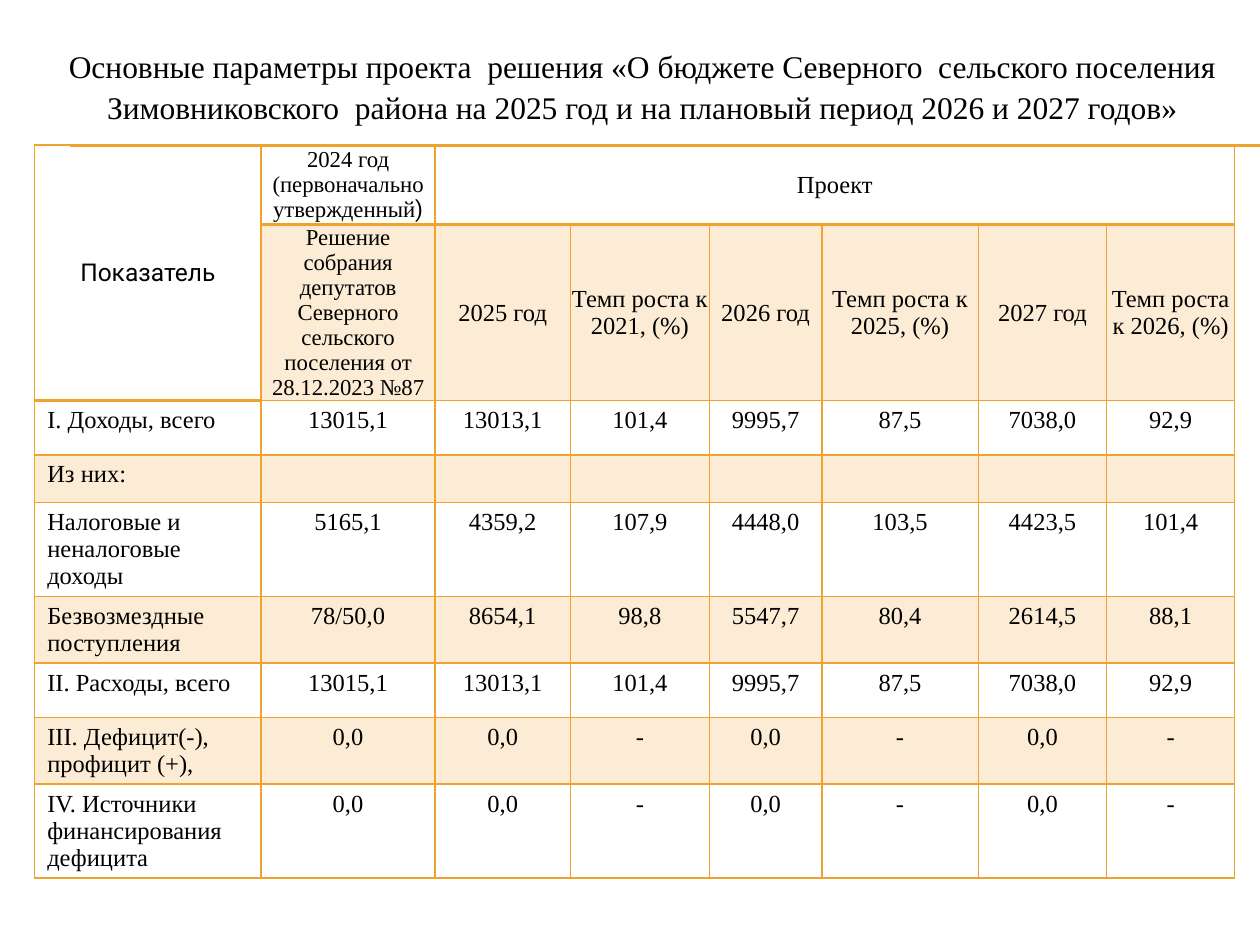
from dataclasses import dataclass

from lxml import etree
from pptx import Presentation
from pptx.dml.color import RGBColor
from pptx.enum import shapes, text
from pptx.oxml import ns
from pptx.util import Pt


@dataclass(frozen=True)
class Theme:
    accent: str = "F0A22E"
    ink: str = "000000"
    band_alpha: int = 20
    serif: str = "Times New Roman"
    sans: str = "Roboto"
    title_size: int = 18
    body_size: int = 14
    small_size: int = 13


THEME = Theme()

TITLE = ("Основные параметры проекта  решения «О бюджете Северного  сельского поселения "
         "Зимовниковского  района на 2025 год и на плановый период 2026 и 2027 годов»")
COLUMN_WIDTHS = [129.4, 99.4, 77.4, 79.4, 64.3, 89.4, 73.4, 73.1]
ROW_HEIGHTS = [45.4, 90.7, 31, 27.2, 31, 31, 31, 31, 51.8]

DECISION = "Решение собрания депутатов Северного сельского поселения от 28.12.2023 №87"
PERIODS = ["2025 год", "Темп роста к 2021, (%)", "2026 год", "Темп роста к 2025, (%)",
           "2027 год", "Темп роста к 2026, (%)"]
TOTALS = ["13015,1", "13013,1", "101,4", "9995,7", "87,5", "7038,0", "92,9"]
BALANCE = ["0,0", "0,0", "-", "0,0", "-", "0,0", "-"]
INDICATORS = [
    ["I. Доходы, всего", *TOTALS],
    ["Из них:", *[""] * 7],
    ["Налоговые и неналоговые доходы",
     "5165,1", "4359,2", "107,9", "4448,0", "103,5", "4423,5", "101,4"],
    ["Безвозмездные поступления",
     "78/50,0", "8654,1", "98,8", "5547,7", "80,4", "2614,5", "88,1"],
    ["II. Расходы, всего", *TOTALS],
    ["III. Дефицит(-), профицит (+),", *BALANCE],
    ["IV. Источники финансирования дефицита", *BALANCE],
]


def add_run(paragraph, wording, size, font=THEME.serif):
    run = paragraph.add_run()
    run.text = wording
    run.font.size = Pt(size)
    run.font.name = font
    run.font.color.rgb = RGBColor.from_string(THEME.ink)


def add_title(slide):
    title = slide.shapes.title
    title.left, title.top, title.width, title.height = Pt(25.2), Pt(15.1), Pt(684), Pt(66.2)
    title.text_frame.vertical_anchor = text.MSO_ANCHOR.MIDDLE
    paragraph = title.text_frame.paragraphs[0]
    paragraph.alignment = text.PP_ALIGN.CENTER
    paragraph.line_spacing = 1.1
    add_run(paragraph, TITLE, THEME.title_size)


def add_rule(slide, y):
    rule = slide.shapes.add_connector(
        shapes.MSO_CONNECTOR.STRAIGHT, Pt(40.3), Pt(y), Pt(720), Pt(y))
    rule.line.color.rgb = RGBColor.from_string(THEME.accent)
    rule.line.width = Pt(0.75)
    etree.SubElement(rule._element.spPr, ns.qn("a:effectLst"))


def set_borders(cell, bottom_width):
    properties = cell._tc.get_or_add_tcPr()
    for side, width in (("L", 1), ("R", 1), ("T", 1), ("B", bottom_width)):
        border = etree.SubElement(properties, ns.qn(f"a:ln{side}"), w=str(Pt(width)))
        fill = etree.SubElement(border, ns.qn("a:solidFill"))
        etree.SubElement(fill, ns.qn("a:srgbClr"), val=THEME.accent)


def set_fill(cell, banded):
    if not banded:
        cell.fill.background()
        return
    cell.fill.solid()
    cell.fill.fore_color.rgb = RGBColor.from_string(THEME.accent)
    color = cell._tc.tcPr.find(f".//{ns.qn('a:solidFill')}[last()]/{ns.qn('a:srgbClr')}")
    color = cell._tc.tcPr.find(ns.qn("a:solidFill")).find(ns.qn("a:srgbClr"))
    etree.SubElement(color, ns.qn("a:alpha"), val=str(THEME.band_alpha * 1000))


def write_header(cell, *lines, size=THEME.body_size):
    """Each line is a list of (wording, font) runs."""
    cell.vertical_anchor = text.MSO_ANCHOR.MIDDLE
    cell.margin_left = cell.margin_right = cell.margin_top = Pt(0.7)
    cell.margin_bottom = 0
    frame = cell.text_frame
    for number, runs in enumerate(lines):
        paragraph = frame.add_paragraph() if number else frame.paragraphs[0]
        paragraph.alignment = text.PP_ALIGN.CENTER
        for wording, font in runs:
            add_run(paragraph, wording, size, font)


def write_value(cell, wording, alignment):
    paragraph = cell.text_frame.paragraphs[0]
    paragraph.alignment = alignment
    if wording:
        add_run(paragraph, wording, THEME.body_size)
    else:
        # Keeps the row of an empty cell at the body text height
        etree.SubElement(paragraph._p, ns.qn("a:endParaRPr"), sz=str(THEME.body_size * 100))


def add_budget_table(slide):
    budget = slide.shapes.add_table(
        len(ROW_HEIGHTS), len(COLUMN_WIDTHS), Pt(19.8), Pt(82.8),
        Pt(sum(COLUMN_WIDTHS)), Pt(sum(ROW_HEIGHTS))).table
    budget.first_row = budget.horz_banding = False
    for column, width in zip(budget.columns, COLUMN_WIDTHS):
        column.width = Pt(width)
    for row, height in zip(budget.rows, ROW_HEIGHTS):
        row.height = Pt(height)

    # Borders and banding
    for r in range(len(ROW_HEIGHTS)):
        for c in range(len(COLUMN_WIDTHS)):
            cell = budget.cell(r, c)
            set_borders(cell, 2 if r == 0 or (r, c) == (1, 0) else 1)
            set_fill(cell, r % 2 == 1 and (r, c) != (1, 0))

    # Two-level header
    budget.cell(0, 0).merge(budget.cell(1, 0))
    budget.cell(0, 2).merge(budget.cell(0, 7))
    write_header(budget.cell(0, 0), [("Показатель", THEME.sans)])
    write_header(budget.cell(0, 1), [("2024 год", THEME.serif)],
                 [("(первоначально утвержденный", THEME.serif), (")", THEME.sans)],
                 size=THEME.small_size)
    write_header(budget.cell(0, 2), [("Проект", THEME.serif)])
    write_header(budget.cell(1, 1), [(DECISION, THEME.serif)], size=THEME.small_size)
    for c, period in enumerate(PERIODS, start=2):
        write_header(budget.cell(1, c), [(period, THEME.serif)])

    # Indicator rows
    for r, indicator in enumerate(INDICATORS, start=2):
        for c, wording in enumerate(indicator):
            alignment = text.PP_ALIGN.CENTER if c else text.PP_ALIGN.LEFT
            write_value(budget.cell(r, c), wording, alignment)


def main():
    deck = Presentation()
    deck.slide_width, deck.slide_height = Pt(720), Pt(540)
    slide = deck.slides.add_slide(deck.slide_layouts[5])

    # Double rule under the title
    for y in (82.8, 83.5):
        add_rule(slide, y)
    add_title(slide)
    add_budget_table(slide)
    deck.save("out.pptx")


if __name__ == "__main__":
    main()
